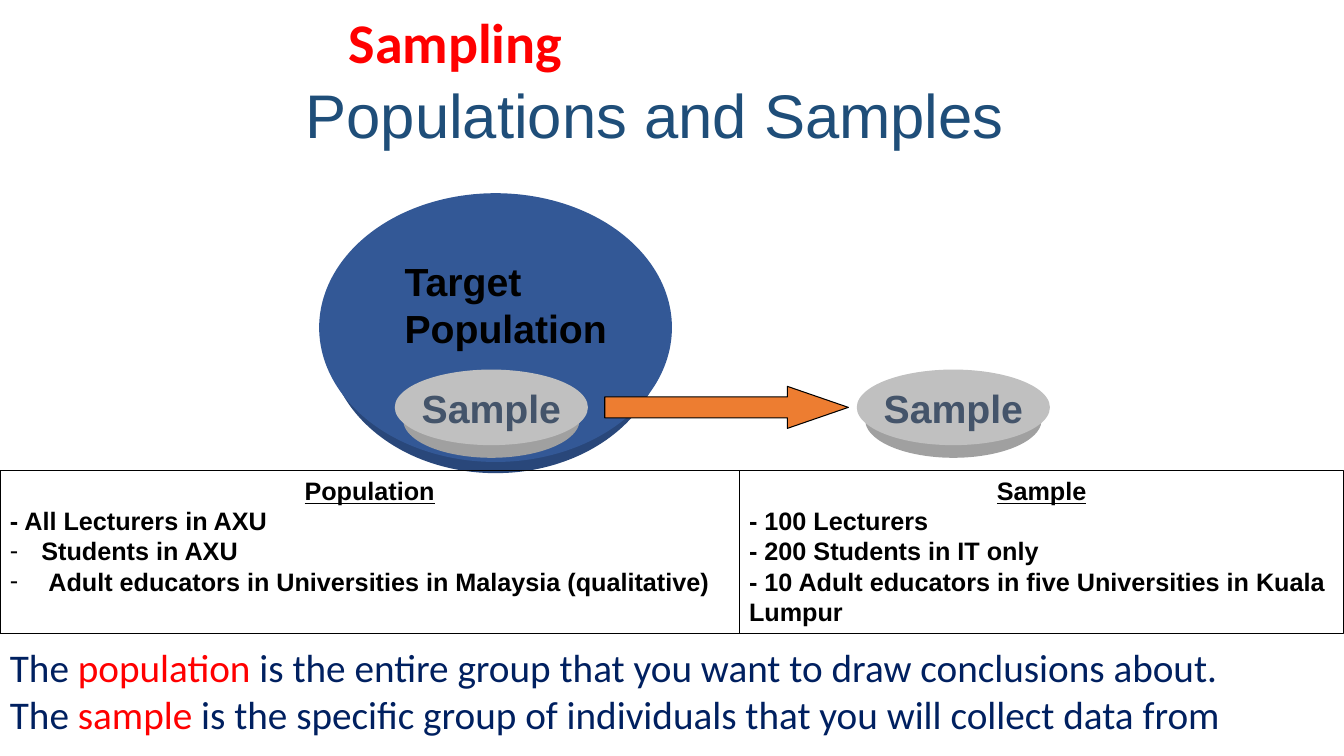
from collections import namedtuple

from lxml.etree import SubElement
from pptx import Presentation
from pptx.dml.color import RGBColor
from pptx.enum.shapes import MSO_SHAPE
from pptx.enum.text import MSO_ANCHOR, MSO_AUTO_SIZE, PP_ALIGN
from pptx.oxml.ns import qn
from pptx.util import Pt

COLOURS = {
    "title": "1F4E79", "accent": "FF0000", "body": "002060", "ink": "000000",
    "population": "335896", "population_side": "29477A",
    "sample": "C0C0C0", "sample_side": "A0A0A0", "sample_text": "44546A",
    "arrow": "ED7D31",
}
Box = namedtuple("Box", "left top width height")

TITLE = {"name": "Arial", "size": Pt(44), "bold": False}
KICKER = {"name": "Calibri", "size": Pt(40), "bold": True}
LABEL = {"name": "Arial", "size": Pt(28), "bold": True}
EXAMPLE = {"name": "Arial", "size": Pt(18), "bold": True, "underline": False}
HEADER = EXAMPLE | {"underline": True}
DEFINITION = {"name": "Calibri", "size": Pt(28), "bold": False}


def colour(key):
    """Return the named colour."""
    return RGBColor.from_string(COLOURS[key])


def apply(target, values):
    """Set each attribute of the target from a dict of values."""
    for attribute, value in values.items():
        setattr(target, attribute, value)


def write(paragraph, runs, font, align=PP_ALIGN.LEFT):
    """Write (wording, colour key) runs into a paragraph."""
    paragraph.alignment = align
    for wording, key in runs:
        run = paragraph.add_run()
        run.text = wording
        apply(run.font, font)
        run.font.color.rgb = colour(key)


def next_paragraph(frame, index):
    """Return the first paragraph for index 0, otherwise a new one."""
    return frame.add_paragraph() if index else frame.paragraphs[0]


def add_dash(paragraph, indent):
    """Give a paragraph a hanging dash bullet."""
    properties = paragraph._p.get_or_add_pPr()
    properties.set("marL", str(Pt(indent)))
    properties.set("indent", str(-Pt(indent)))
    SubElement(properties, qn("a:buFont"), typeface="Arial")
    SubElement(properties, qn("a:buChar"), char="-")


def add_form(slide, kind, box, fill=None, outline=None):
    """Add a flat preset shape with an optional fill and outline."""
    form = slide.shapes.add_shape(kind, *map(Pt, box))
    form.shadow.inherit = False
    if fill:
        form.fill.solid()
        form.fill.fore_color.rgb = colour(fill)
    else:
        form.fill.background()
    if outline:
        form.line.color.rgb = colour(outline)
        form.line.width = Pt(0.75)
    else:
        form.line.fill.background()
    return form


def add_lines(slide, box, lines, font, wrap):
    """Add a text box with one paragraph for each list of runs."""
    frame = slide.shapes.add_textbox(*map(Pt, box)).text_frame
    frame.word_wrap = wrap
    for index, runs in enumerate(lines):
        write(next_paragraph(frame, index), runs, font)


def add_heading(slide, box):
    """Place the title and the red topic above it."""
    title = slide.shapes.title
    apply(title, dict(zip(Box._fields, map(Pt, box))))
    apply(title.text_frame, {"vertical_anchor": MSO_ANCHOR.MIDDLE,
                             "auto_size": MSO_AUTO_SIZE.NONE, "word_wrap": True})
    heading = title.text_frame.paragraphs[0]
    write(heading, [("Populations and Samples", "title")], TITLE)
    heading.line_spacing = 0.9
    topic = Box(box.left + 31, box.top - 47, 178, 55)
    add_lines(slide, topic, [[("Sampling", "accent")]], KICKER, False)


def add_disc(slide, box, key, depth, inset):
    """Add an ellipse with a darker side showing below it."""
    side = Box(box.left + inset, box.top + depth, box.width - 2 * inset, box.height)
    add_form(slide, MSO_SHAPE.OVAL, side, key + "_side")
    return add_form(slide, MSO_SHAPE.OVAL, box, key)


def add_sample(slide, box):
    """Add a labelled sample disc."""
    frame = add_disc(slide, box, "sample", 9, 6).text_frame
    apply(frame, {"word_wrap": False, "vertical_anchor": MSO_ANCHOR.MIDDLE})
    write(frame.paragraphs[0], [("Sample", "sample_text")], LABEL, PP_ALIGN.CENTER)


def add_diagram(slide, box):
    """Show a sample being drawn from the target population."""
    left, top, width, height = box
    add_disc(slide, Box(left, top, 252, height - 8), "population", 8, 6)
    for sample_left in (left + 54, left + width - 138):
        add_sample(slide, Box(sample_left, top + 126, 138, 54))
    add_lines(slide, Box(left + 54, top + 42, 161, 75),
              [[("Target", "ink")], [("Population", "ink")]], LABEL, False)
    arrow = add_form(slide, MSO_SHAPE.RIGHT_ARROW,
                     Box(left + 204, top + 138, 174, 30), "arrow", "ink")
    arrow.adjustments[1] = 1.45


def add_examples(slide, box, header, examples):
    """Add an outlined box of examples, given as (wording, bullet indent)."""
    frame = add_form(slide, MSO_SHAPE.RECTANGLE, box, outline="ink").text_frame
    apply(frame, {"word_wrap": True, "vertical_anchor": MSO_ANCHOR.TOP})
    write(frame.paragraphs[0], [(header, "ink")], HEADER, PP_ALIGN.CENTER)
    for wording, indent in examples:
        example = frame.add_paragraph()
        write(example, [(wording, "ink")], EXAMPLE)
        if indent:
            add_dash(example, indent)


def add_comparison(slide, box):
    """Set population and sample examples side by side."""
    split = 528
    add_examples(slide, box._replace(width=split), "Population", [
        ("- All Lecturers in AXU", 0),
        ("Students in AXU", 22.5),
        ("Adult educators in Universities in Malaysia (qualitative)", 27.5),
    ])
    add_examples(slide, box._replace(left=box.left + split, width=box.width - split),
                 "Sample", [
        ("- 100 Lecturers", 0),
        ("- 200 Students in IT only", 0),
        ("- 10 Adult educators in five Universities in Kuala Lumpur", 0),
    ])


def add_definitions(slide, box):
    """Define population and sample, with both terms in red."""
    meanings = {
        "population": " is the entire group that you want to draw conclusions about.",
        "sample": " is the specific group of individuals that you will collect data from",
    }
    lines = [[("The ", "body"), (term, "accent"), (meaning, "body")]
             for term, meaning in meanings.items()]
    add_lines(slide, box, lines, DEFINITION, True)


def main():
    """Build and save the slide."""
    deck = Presentation()
    apply(deck, {"slide_width": Pt(960), "slide_height": Pt(540)})
    slide = deck.slides.add_slide(deck.slide_layouts.get_by_name("Title Only"))
    add_heading(slide, Box(211, 49, 613, 71))
    add_diagram(slide, Box(228, 138, 522, 200))
    add_comparison(slide, Box(0, 336, 960, 116.5))
    add_definitions(slide, Box(0, 456, 960, 75))
    deck.save("out.pptx")


if __name__ == "__main__":
    main()
